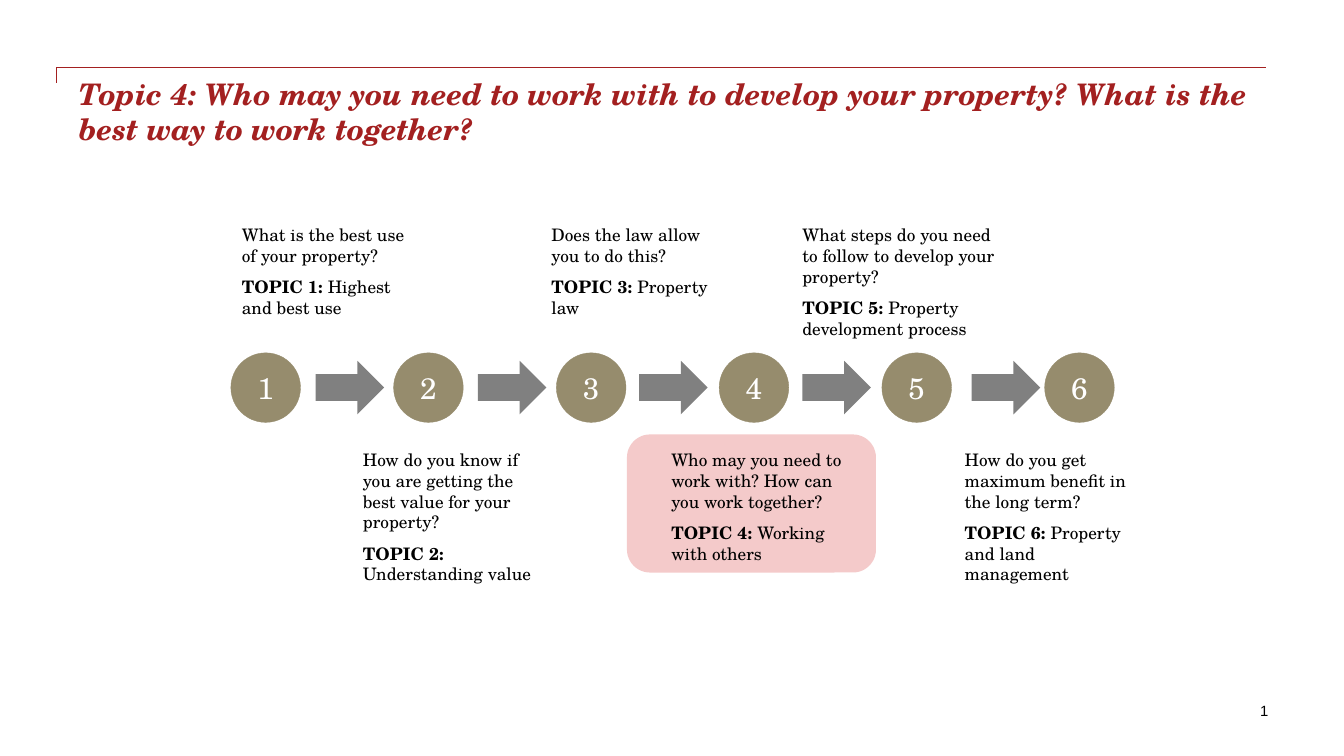
from typing import NamedTuple

from lxml import etree
from pptx import Presentation
from pptx import util as u
from pptx.dml.color import RGBColor
from pptx.enum import shapes, text
from pptx.oxml.ns import qn

FONT = "TeX Gyre Schola"
HUES = {"red": "A32020", "pink": "EA9696", "tan": "968C6D",
        "grey": "808080", "white": "FFFFFF", "black": "000000"}
WIDE, HIGH = u.Inches(13.33), u.Inches(7.5)


class Box(NamedTuple):
    """Place and size, in percent of the slide's width and height."""
    left: float
    top: float
    width: float
    height: float


class Topic(NamedTuple):
    ask: str
    name: str
    left: float
    width: float = 13.05
    height: float = 16.27


TOPICS = [
    Topic("What is the best use of your property?", "Highest and best use", 18),
    Topic("How do you know if you are getting the best value for your property?",
          "Understanding value", 27),
    Topic("Does the law allow you to do this?", "Property law", 41.03, height=12.8),
    Topic("Who may you need to work with? How can you work together?",
          "Working with others", 49.95),
    Topic("What steps do you need to follow to develop your property?",
          "Property development process", 59.7, 14.33),
    Topic("How do you get maximum benefit in the long term?",
          "Property and land management", 71.78),
]
ARROWS = [23.48, 35.55, 47.55, 59.7, 72.3]
FIRST, PITCH = 17.18, 12.11  # left of the first circle, step to the next
UPPER, LOWER = 29.73, 59.47  # tops of the two rows of topics


def col(share: float) -> int:
    return round(WIDE * share / 100)


def row(share: float) -> int:
    return round(HIGH * share / 100)


def place(box: Box) -> tuple[int, int, int, int]:
    return col(box.left), row(box.top), col(box.width), row(box.height)


def hue(name: str) -> RGBColor:
    return RGBColor.from_string(HUES[name])


def write(para, words: str, size: float, tint: str = "black",
          bold: bool = False, slant: bool = False, face: str = FONT) -> None:
    run = para.add_run()
    run.text = words
    font = run.font
    font.name, font.size, font.bold, font.italic = face, u.Pt(size), bold, slant
    font.color.rgb = hue(tint)


def trim(frame) -> None:
    frame.word_wrap = True
    frame.auto_size = text.MSO_AUTO_SIZE.NONE
    frame.vertical_anchor = text.MSO_ANCHOR.TOP
    frame.margin_left = frame.margin_right = 0
    frame.margin_top = frame.margin_bottom = 0


def draw(slide, kind, box: Box, tint: str):
    shape = slide.shapes.add_shape(kind, *place(box))
    shape.shadow.inherit = False
    shape.fill.solid()
    shape.fill.fore_color.rgb = hue(tint)
    shape.line.fill.background()
    return shape


def add_rule(slide) -> None:
    pen = slide.shapes.build_freeform(col(4.2), row(10.93))
    pen.add_line_segments([(col(4.2), row(8.93)), (col(94.2), row(8.93))], close=False)
    rule = pen.convert_to_shape()
    rule.shadow.inherit = False
    rule.fill.background()
    rule.line.color.rgb = hue("red")
    rule.line.width = u.Pt(1)


def add_title(slide) -> None:
    title = slide.shapes.title
    title.left, title.top, title.width, title.height = place(Box(5.85, 10, 88.35, 13.33))
    trim(title.text_frame)
    para = title.text_frame.paragraphs[0]
    para.alignment = text.PP_ALIGN.LEFT
    write(para, "Topic 4: Who may you need to work with to develop your property? "
          "What is the best way to work together?", 21.2, "red", bold=True, slant=True)


def add_focus(slide) -> None:
    focus = draw(slide, shapes.MSO_SHAPE.ROUNDED_RECTANGLE,
                 Box(46.65, 57.47, 18.53, 18.27), "pink")
    tone = focus.element.spPr.find(".//" + qn("a:srgbClr"))
    etree.SubElement(tone, qn("a:alpha"), val="50000")


def add_step(slide, num: int) -> None:
    disc = draw(slide, shapes.MSO_SHAPE.OVAL,
                Box(FIRST + PITCH * (num - 1), 46.67, 5.18, 9.2), "tan")
    disc.line.color.rgb = hue("tan")
    disc.line.width = u.Pt(0.25)
    disc.text_frame.vertical_anchor = text.MSO_ANCHOR.MIDDLE
    para = disc.text_frame.paragraphs[0]
    para.alignment = text.PP_ALIGN.CENTER
    write(para, str(num), 21.2, "white")


def add_topic(slide, num: int, topic: Topic) -> None:
    top = UPPER if num % 2 else LOWER
    box = Box(topic.left, top, topic.width, topic.height)
    frame = slide.shapes.add_textbox(*place(box)).text_frame
    trim(frame)
    ask, name = frame.paragraphs[0], frame.add_paragraph()
    ask.space_after = name.space_after = u.Pt(7.5)
    write(ask, topic.ask, 12.3)
    write(name, f"TOPIC {num}: ", 12.3, bold=True)
    write(name, topic.name, 12.3)


def add_page(slide) -> None:
    frame = slide.shapes.add_textbox(*place(Box(67.8, 91.6, 27.3, 4.67))).text_frame
    frame.word_wrap = True
    frame.vertical_anchor = text.MSO_ANCHOR.MIDDLE
    para = frame.paragraphs[0]
    para.alignment = text.PP_ALIGN.RIGHT
    write(para, "1", 10.6, face="Arial")


def main() -> None:
    deck = Presentation()
    deck.slide_width, deck.slide_height = WIDE, HIGH
    slide = deck.slides.add_slide(deck.slide_layouts[5])

    # Heading
    add_rule(slide)
    add_title(slide)

    # Chain of topics
    add_focus(slide)
    for num, topic in enumerate(TOPICS, 1):
        add_step(slide, num)
        add_topic(slide, num, topic)
    for left in ARROWS:
        draw(slide, shapes.MSO_SHAPE.RIGHT_ARROW, Box(left, 47.73, 5.1, 7.07), "grey")

    # Footer
    add_page(slide)
    deck.save("out.pptx")


if __name__ == "__main__":
    main()
